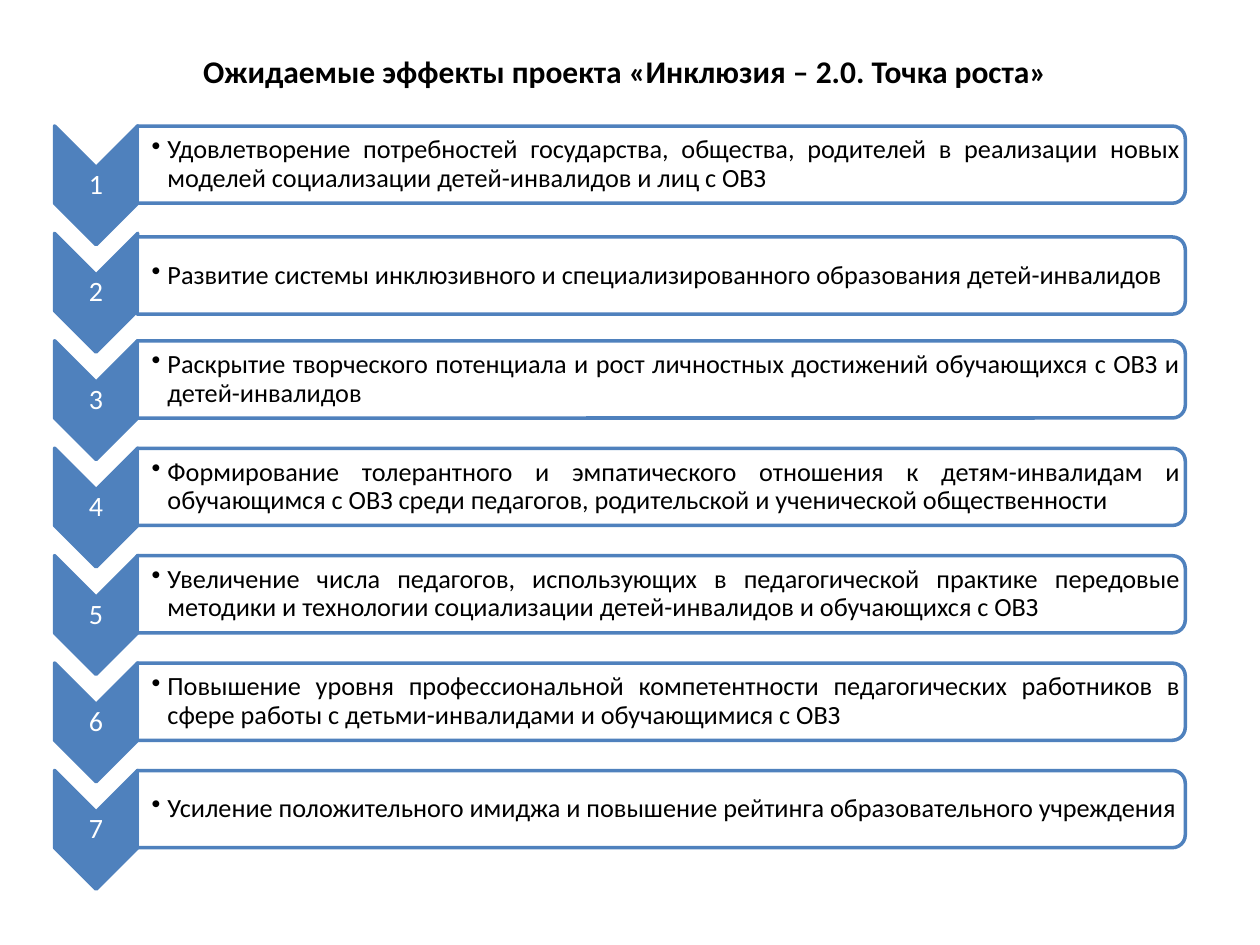
import pptx
import pptx.util
import pptx.dml.color
import pptx.enum.shapes
import pptx.enum.text
import pptx.oxml.ns
import lxml.etree

Pt = pptx.util.Pt
SHAPES = pptx.enum.shapes.MSO_SHAPE
ALIGN = pptx.enum.text.PP_ALIGN
ANCHOR = pptx.enum.text.MSO_ANCHOR

COLORS = {"blue": "4F81BD", "white": "FFFFFF", "black": "000000"}
FONT = "Calibri"
TITLE = "Ожидаемые эффекты проекта «Инклюзия – 2.0. Точка роста»"
EFFECTS = [
    ("Удовлетворение потребностей государства, общества, родителей в реализации новых моделей социализации детей-инвалидов и лиц с ОВЗ", ALIGN.JUSTIFY),
    ("Развитие системы инклюзивного и специализированного образования детей-инвалидов", ALIGN.JUSTIFY),
    ("Раскрытие творческого потенциала и рост личностных достижений обучающихся с ОВЗ и детей-инвалидов", ALIGN.JUSTIFY),
    ("Формирование толерантного и эмпатического отношения к детям-инвалидам и обучающимся с ОВЗ среди педагогов, родительской и ученической общественности", ALIGN.JUSTIFY),
    ("Увеличение числа педагогов, использующих в педагогической практике передовые методики и технологии социализации детей-инвалидов и обучающихся с ОВЗ", ALIGN.JUSTIFY),
    ("Повышение уровня профессиональной компетентности педагогических работников в сфере работы с детьми-инвалидами и обучающимися с ОВЗ", ALIGN.JUSTIFY),
    ("Усиление положительного имиджа и повышение рейтинга образовательного учреждения", ALIGN.LEFT),
]
ROW_PITCH = 61.38
CHEVRON_X, CHEVRON_Y = 54.9, 105.9
CHEVRON_LENGTH, CHEVRON_WIDTH = 67.9, 47.5
PANEL_X, PANEL_Y = 377.8, 94.1
PANEL_LENGTH, PANEL_WIDTH = 599, 44.1
PANEL_SHIFTS = {1: 2}
PANEL_LEFT, TEXT_WIDTH, TEXT_HEIGHT = 78.3, 597, 39.8
NUMBER_HEIGHT = 20.2
INSET, PANEL_INSET, BULLET_INDENT = 0.7, 8.4, 9


def color(name):
    return pptx.dml.color.RGBColor.from_string(COLORS[name])


def add_turned_shape(page, kind, center_x, center_y, length, width, fill):
    shape = page.shapes.add_shape(
        kind, Pt(center_x - length / 2), Pt(center_y - width / 2), Pt(length), Pt(width))
    shape.rotation = 90
    shape.shadow.inherit = False
    shape.fill.solid()
    shape.fill.fore_color.rgb = color(fill)
    shape.line.color.rgb = color("blue")
    shape.line.width = Pt(2)
    return shape


def set_opacity(shape, percent):
    tint = shape.fill._xPr.find(".//" + pptx.oxml.ns.qn("a:srgbClr"))
    lxml.etree.SubElement(tint, pptx.oxml.ns.qn("a:alpha"), val=str(percent * 1000))


def add_bullet(para):
    properties = para._p.get_or_add_pPr()
    properties.set("marL", str(Pt(BULLET_INDENT)))
    properties.set("indent", str(-Pt(BULLET_INDENT)))
    lxml.etree.SubElement(properties, pptx.oxml.ns.qn("a:buChar"), char="•")


def add_text(page, left, top, width, height, text, size, ink, align,
             insets=None, bold=False, bullet=False):
    box = page.shapes.add_textbox(Pt(left), Pt(top), Pt(width), Pt(height))
    frame = box.text_frame
    frame.word_wrap = True
    para = frame.paragraphs[0]
    para.alignment = align
    if insets:
        frame.vertical_anchor = ANCHOR.MIDDLE
        frame.margin_left, frame.margin_top, frame.margin_right, frame.margin_bottom = map(Pt, insets)
        para.line_spacing = 0.9
    if bullet:
        para.level = 1
        add_bullet(para)
    span = para.add_run()
    span.text = text
    span.font.name = FONT
    span.font.size = Pt(size)
    span.font.bold = bold
    span.font.color.rgb = color(ink)
    return box


def main():
    deck = pptx.Presentation()
    deck.slide_width, deck.slide_height = Pt(720), Pt(540)
    page = deck.slides.add_slide(deck.slide_layouts[6])

    for row, (effect, align) in enumerate(EFFECTS):
        chevron_y = CHEVRON_Y + row * ROW_PITCH
        panel_y = PANEL_Y + row * ROW_PITCH + PANEL_SHIFTS.get(row, 0)
        add_turned_shape(page, SHAPES.CHEVRON, CHEVRON_X, chevron_y,
                         CHEVRON_LENGTH, CHEVRON_WIDTH, "blue")
        add_text(page, CHEVRON_X - CHEVRON_WIDTH / 2, chevron_y - NUMBER_HEIGHT / 2,
                 CHEVRON_WIDTH, NUMBER_HEIGHT, str(row + 1), 16, "white",
                 ALIGN.CENTER, insets=(INSET,) * 4)
        panel = add_turned_shape(page, SHAPES.ROUND_2_SAME_RECTANGLE, PANEL_X, panel_y,
                                 PANEL_WIDTH, PANEL_LENGTH, "white")
        set_opacity(panel, 90)
        add_text(page, PANEL_LEFT, panel_y - TEXT_HEIGHT / 2, TEXT_WIDTH, TEXT_HEIGHT,
                 effect, 15, "black", align,
                 insets=(PANEL_INSET, INSET, INSET, INSET), bullet=True)

    title = add_text(page, 76.5, 26, 561.5, 29, TITLE, 18, "black", ALIGN.CENTER, bold=True)
    title.text_frame.auto_size = pptx.enum.text.MSO_AUTO_SIZE.SHAPE_TO_FIT_TEXT
    deck.save("out.pptx")


if __name__ == "__main__":
    main()
